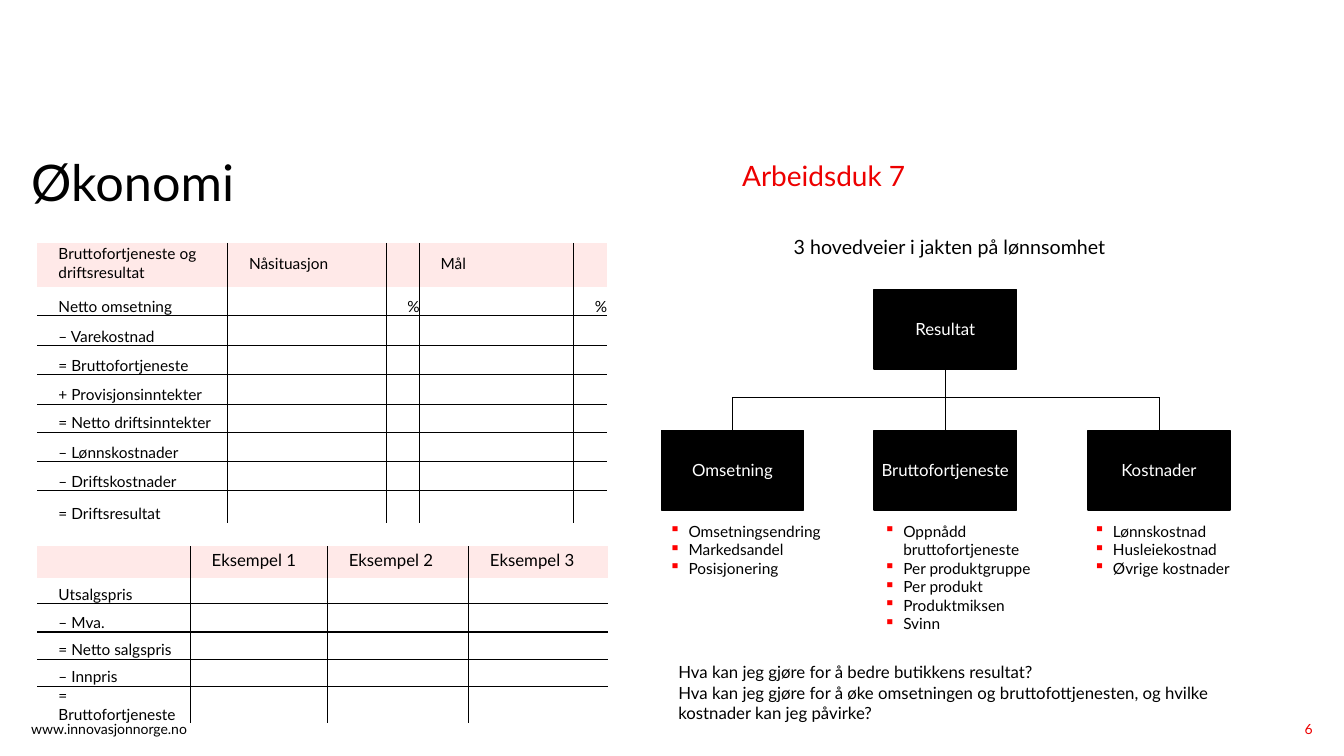
from dataclasses import dataclass

from lxml import etree
from pptx import Presentation
from pptx.dml.color import RGBColor
from pptx.enum import shapes, text
from pptx.oxml import ns
from pptx.util import Inches, Pt


@dataclass(frozen=True)
class Theme:
    font: str = "Lato"
    ink: str = "000000"
    paper: str = "FFFFFF"
    accent: str = "ED0000"
    bullet: str = "FF0000"
    header: str = "FFE9E8"
    title: int = 36
    subtitle: int = 20
    heading: int = 14
    label: int = 12
    body: int = 11
    small: int = 10


T = Theme()
LEFT, CENTER, RIGHT = text.PP_ALIGN.LEFT, text.PP_ALIGN.CENTER, text.PP_ALIGN.RIGHT
TOP, MIDDLE, BOTTOM = text.MSO_ANCHOR.TOP, text.MSO_ANCHOR.MIDDLE, text.MSO_ANCHOR.BOTTOM

TITLE = "Økonomi"
SUBTITLE = "Arbeidsduk 7"
SITE = "www.innovasjonnorge.no"
PAGE = "6"
TREE_HEADING = "3 hovedveier i jakten på lønnsomhet"
QUESTIONS = [
    "Hva kan jeg gjøre for å bedre butikkens resultat?",
    "Hva kan jeg gjøre for å øke omsetningen og bruttofottjenesten, og hvilke kostnader kan jeg påvirke?",
]
TABLES = [
    {
        "top": 2.41,
        "header_size": T.body,
        "cols": [1.89, 1.57, 0.33, 1.53, 0.33],
        "heights": [0.44, 0.28, 0.3, 0.29, 0.29, 0.28, 0.29, 0.29, 0.32],
        "rows": [
            ["Bruttofortjeneste og driftsresultat", "Nåsituasjon", "", "Mål", ""],
            ["Netto omsetning", "", "%", "", "%"],
            ["– Varekostnad"],
            ["= Bruttofortjeneste"],
            ["+ Provisjonsinntekter"],
            ["= Netto driftsinntekter"],
            ["– Lønnskostnader"],
            ["– Driftskostnader"],
            ["= Driftsresultat"],
        ],
    },
    {
        "top": 5.42,
        "header_size": T.label,
        "cols": [1.52, 1.36, 1.4, 1.38],
        "heights": [0.31, 0.26, 0.28, 0.27, 0.27, 0.26],
        "rows": [
            ["", "Eksempel 1", "Eksempel 2", "Eksempel 3"],
            ["Utsalgspris"],
            ["– Mva."],
            ["= Netto salgspris"],
            ["– Innpris"],
            ["= Bruttofortjeneste"],
        ],
    },
]
ROOT = "Resultat"
BRANCHES = [
    ("Omsetning", 6.56, 6.54, ["Omsetningsendring", "Markedsandel", "Posisjonering"]),
    ("Bruttofortjeneste", 8.67, 8.67, ["Oppnådd bruttofortjeneste", "Per produktgruppe",
                                      "Per produkt", "Produktmiksen", "Svinn"]),
    ("Kostnader", 10.79, 10.75, ["Lønnskostnad", "Husleiekostnad", "Øvrige kostnader"]),
]
BOX_W, BOX_H = 1.41, 0.79
ROOT_X, ROOT_Y, BUS_Y, BRANCH_Y, LIST_Y = 8.67, 2.87, 3.94, 4.27, 5.13
TABLE_X = 0.37


def write(tf, lines, size=T.body, color=T.ink, align=LEFT, anchor=TOP,
          indent=0, hanging=0, bullet=None, spacing=1.0):
    tf.vertical_anchor = anchor
    for i, line in enumerate([lines] if isinstance(lines, str) else lines):
        p = tf.paragraphs[0] if i == 0 else tf.add_paragraph()
        pPr = p._p.get_or_add_pPr()
        pPr.set("marL", str(Inches(indent)))
        pPr.set("indent", str(-Inches(hanging)))
        if bullet:
            clr = etree.SubElement(pPr, ns.qn("a:buClr"))
            etree.SubElement(clr, ns.qn("a:srgbClr"), val=T.bullet)
            etree.SubElement(pPr, ns.qn("a:buChar"), char=bullet)
        p.alignment, p.line_spacing, p.space_before = align, spacing, Pt(0)
        if line:
            r = p.add_run()
            r.text = line
            r.font.name, r.font.size = T.font, Pt(size)
            r.font.color.rgb = RGBColor.from_string(color)
        else:
            etree.SubElement(p._p, ns.qn("a:endParaRPr"), sz=str(size * 100))


def place(sp, x, y, w, h):
    sp.left, sp.top, sp.width, sp.height = (Inches(v) for v in (x, y, w, h))


def set_margins(target, left, top, right, bottom):
    target.margin_left, target.margin_top = Inches(left), Inches(top)
    target.margin_right, target.margin_bottom = Inches(right), Inches(bottom)


def add_text(slide, lines, x, y, w, h, flush=False, **fmt):
    tf = slide.shapes.add_textbox(*(Inches(v) for v in (x, y, w, h))).text_frame
    tf.word_wrap = True
    if flush:
        set_margins(tf, 0, 0, 0, 0)
    write(tf, lines, **fmt)


def fill_placeholder(sp, line, x, y, w, h, **fmt):
    place(sp, x, y, w, h)
    tf = sp.text_frame
    tf.auto_size = text.MSO_AUTO_SIZE.NONE
    set_margins(tf, 0, 0, 0, 0)
    write(tf, line, spacing=0.9, **fmt)


def set_borders(cell, sides):
    tcPr = cell._tc.get_or_add_tcPr()
    for side in "LRTB":
        ln = etree.SubElement(tcPr, ns.qn("a:ln" + side), w=str(Pt(1)))
        if side in sides:
            fill = etree.SubElement(ln, ns.qn("a:solidFill"))
            etree.SubElement(fill, ns.qn("a:srgbClr"), val=T.ink)
        else:
            etree.SubElement(ln, ns.qn("a:noFill"))


def add_grid(slide, top, header_size, cols, heights, rows):
    n, m = len(rows), len(cols)
    frame = slide.shapes.add_table(n, m, Inches(TABLE_X), Inches(top),
                                   Inches(sum(cols)), Inches(sum(heights)))
    table = frame.table
    table.first_row = table.horz_banding = False
    for column, width in zip(table.columns, cols):
        column.width = Inches(width)
    for i, (row, height) in enumerate(zip(rows, heights)):
        table.rows[i].height = Inches(height)
        head = i == 0
        for j in range(m):
            cell = table.cell(i, j)
            drawn = {"L": j > 0, "R": j < m - 1, "T": i > 1, "B": 0 < i < n - 1}
            set_borders(cell, [side for side, on in drawn.items() if on])
            if head:
                cell.fill.solid()
                cell.fill.fore_color.rgb = RGBColor.from_string(T.header)
            else:
                cell.fill.background()
            set_margins(cell, 0.05, 0, 0.05, 0.04 if head else 0)
            write(cell.text_frame, row[j] if j < len(row) else "",
                  size=header_size if head else T.body, indent=0.16)
            cell.vertical_anchor = MIDDLE if head else BOTTOM


def add_box(slide, label, x, y):
    sp = slide.shapes.add_shape(shapes.MSO_SHAPE.RECTANGLE, *(Inches(v) for v in (x, y, BOX_W, BOX_H)))
    sp.shadow.inherit = False
    sp.fill.solid()
    sp.fill.fore_color.rgb = sp.line.color.rgb = RGBColor.from_string(T.ink)
    sp.line.width = Pt(1)
    set_margins(sp.text_frame, 0, 0, 0, 0)
    write(sp.text_frame, label, size=T.label, color=T.paper, align=CENTER, anchor=MIDDLE)
    return sp


def add_line(slide, x1, y1, x2, y2, start=None, end=None):
    c = slide.shapes.add_connector(shapes.MSO_CONNECTOR.STRAIGHT, *(Inches(v) for v in (x1, y1, x2, y2)))
    if start:
        c.begin_connect(start, 2)
    if end:
        c.end_connect(end, 0)
    c.line.color.rgb = RGBColor.from_string(T.ink)
    c.line.width = Pt(0.5)
    etree.SubElement(c._element.spPr, ns.qn("a:effectLst"))


def add_tree(slide):
    add_text(slide, TREE_HEADING, 6.59, 2.28, 5.66, 0.34, size=T.heading, align=CENTER)
    root = add_box(slide, ROOT, ROOT_X, ROOT_Y)
    centers = [x + BOX_W / 2 for _, x, _, _ in BRANCHES]
    for (label, x, list_x, items), cx in zip(BRANCHES, centers):
        box = add_box(slide, label, x, BRANCH_Y)
        under_root = x == ROOT_X
        add_line(slide, cx, ROOT_Y + BOX_H if under_root else BUS_Y, cx, BRANCH_Y,
                 start=root if under_root else None, end=box)
        add_text(slide, items, list_x, LIST_Y, 1.72, 0.3 + 0.18 * len(items),
                 indent=0.19, hanging=0.19, bullet="▪")
    add_line(slide, centers[0], BUS_Y, centers[-1], BUS_Y)


def main():
    prs = Presentation()
    prs.slide_width, prs.slide_height = Inches(13.33), Inches(7.5)
    slide = prs.slides.add_slide(prs.slide_layouts[0])
    fill_placeholder(slide.shapes.title, TITLE, 0.31, 1.57, 5.71, 1.41, size=T.title)
    fill_placeholder(slide.placeholders[1], SUBTITLE, 7.36, 1.61, 5.66, 1.41,
                     size=T.subtitle, color=T.accent)
    add_text(slide, SITE, 0.31, 7.15, 2.85, 0.19, flush=True, size=T.small)
    add_text(slide, PAGE, 11.94, 7.15, 1.08, 0.24, flush=True,
             size=T.small, color=T.accent, align=RIGHT)
    for grid in TABLES:
        add_grid(slide, **grid)
    add_tree(slide)
    add_text(slide, QUESTIONS, 6.63, 6.52, 6.14, 0.71, size=T.label)
    prs.save("out.pptx")


if __name__ == "__main__":
    main()
